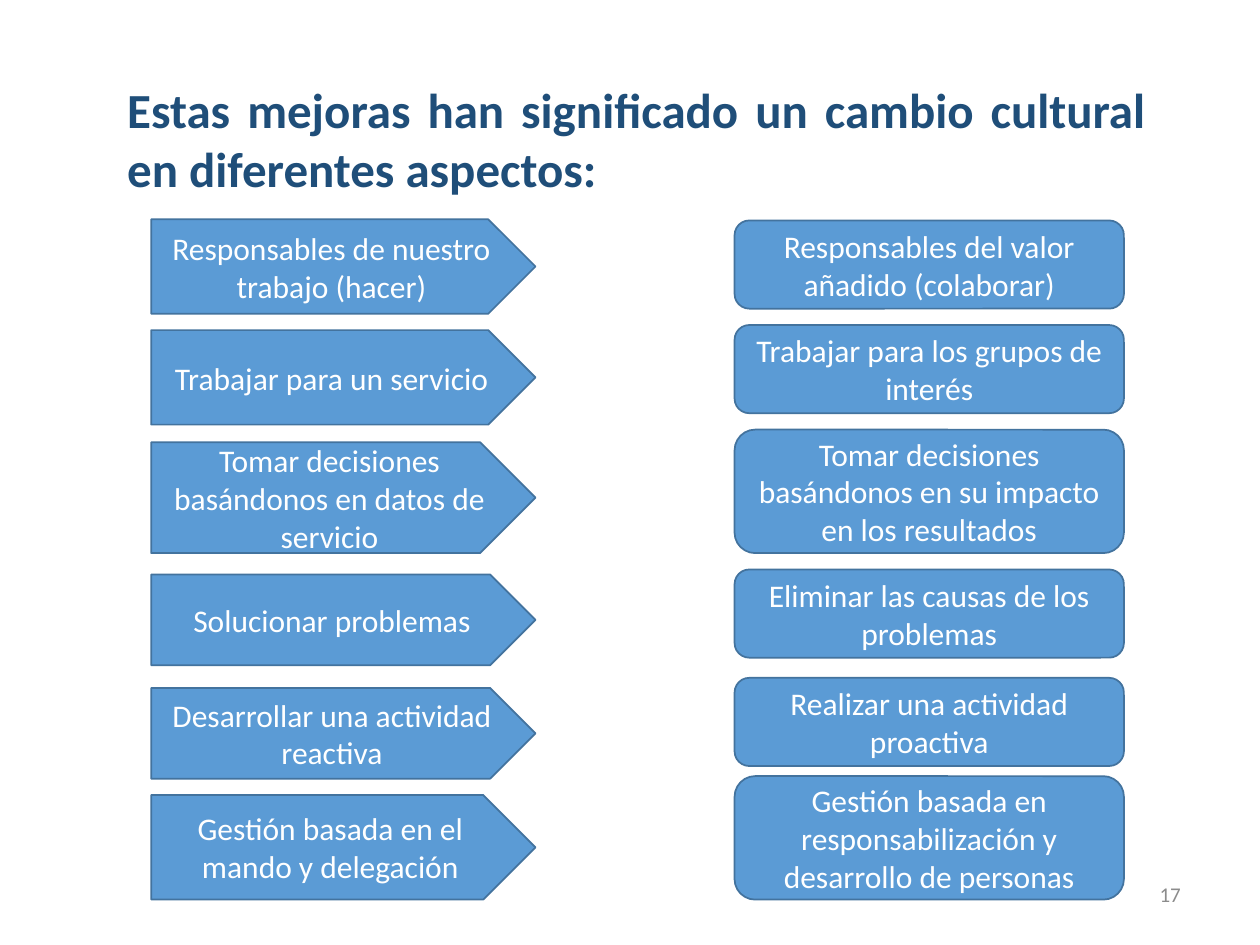
from pptx import Presentation
from pptx.dml.color import RGBColor
from pptx.enum.shapes import MSO_SHAPE
from pptx.enum.text import MSO_ANCHOR, MSO_AUTO_SIZE, PP_ALIGN
from pptx.util import Inches, Pt

PENTAGON, ROUNDED = MSO_SHAPE.PENTAGON, MSO_SHAPE.ROUNDED_RECTANGLE
TOP, MIDDLE = MSO_ANCHOR.TOP, MSO_ANCHOR.MIDDLE
GROW = MSO_AUTO_SIZE.SHAPE_TO_FIT_TEXT
CENTER, RIGHT, JUSTIFY = PP_ALIGN.CENTER, PP_ALIGN.RIGHT, PP_ALIGN.JUSTIFY
TITLE_ONLY = 5

NAVY = RGBColor(0x1F, 0x4E, 0x79)
BLUE = RGBColor(0x5B, 0x9B, 0xD5)
BORDER = RGBColor(0x43, 0x73, 0x9E)
WHITE = RGBColor(0xFF, 0xFF, 0xFF)
GRAY = RGBColor(0x8C, 0x8C, 0x8C)

TITLE_FONT = {"name": "Calibri", "size": Pt(28), "bold": True}
LABEL_FONT = {"name": "Calibri", "size": Pt(18)}
NUMBER_FONT = {"name": "Calibri", "size": Pt(12)}

# Each row: top, height, text
BEFORE = [
    (1.74, 0.75, "Responsables de nuestro trabajo (hacer)"),
    (2.62, 0.75, "Trabajar para un servicio"),
    (3.51, 0.88, "Tomar decisiones basándonos en datos de servicio"),
    (4.56, 0.72, "Solucionar problemas"),
    (5.46, 0.72, "Desarrollar una actividad reactiva"),
    (6.31, 0.83, "Gestión basada en el mando y delegación"),
]
AFTER = [
    (1.75, 0.7, "Responsables del valor añadido (colaborar)"),
    (2.58, 0.7, "Trabajar para los grupos de interés"),
    (3.41, 0.98, "Tomar decisiones basándonos en su impacto en los resultados"),
    (4.52, 0.7, "Eliminar las causas de los problemas"),
    (5.38, 0.7, "Realizar una actividad proactiva"),
    (6.16, 0.98, "Gestión basada en responsabilización y desarrollo de personas"),
]


def write_text(shape, text, font_format, color, alignment, anchor=MIDDLE):
    frame = shape.text_frame
    frame.word_wrap = True
    frame.vertical_anchor = anchor
    paragraph = frame.paragraphs[0]
    paragraph.alignment = alignment
    run = paragraph.add_run()
    run.text = text
    for name, value in font_format.items():
        setattr(run.font, name, value)
    run.font.color.rgb = color


def add_title(slide, text):
    title = slide.shapes.title
    title.left, title.top = Inches(0.91), Inches(0.58)
    title.width, title.height = Inches(8.28), Inches(1.04)
    write_text(title, text, TITLE_FONT, NAVY, JUSTIFY, TOP)
    title.text_frame.auto_size = GROW


def add_column(slide, kind, left, width, rows):
    for top, height, text in rows:
        shape = slide.shapes.add_shape(
            kind, Inches(left), Inches(top), Inches(width), Inches(height))
        shape.shadow.inherit = False
        shape.fill.solid()
        shape.fill.fore_color.rgb = BLUE
        shape.line.color.rgb = BORDER
        shape.line.width = Pt(1)
        write_text(shape, text, LABEL_FONT, WHITE, CENTER)


def add_page_number(slide, number):
    box = slide.shapes.add_textbox(
        Inches(7.22), Inches(6.9), Inches(2.25), Inches(0.4))
    write_text(box, number, NUMBER_FONT, GRAY, RIGHT)


def main():
    presentation = Presentation()
    presentation.slide_width = Inches(10)
    presentation.slide_height = Inches(7.5)
    slide = presentation.slides.add_slide(presentation.slide_layouts[TITLE_ONLY])
    add_page_number(slide, "17")
    add_title(slide, "Estas mejoras han significado un cambio cultural "
                     "en diferentes aspectos:")
    add_column(slide, PENTAGON, 1.2, 3.05, BEFORE)
    add_column(slide, ROUNDED, 5.83, 3.09, AFTER)
    presentation.save("out.pptx")


if __name__ == "__main__":
    main()
